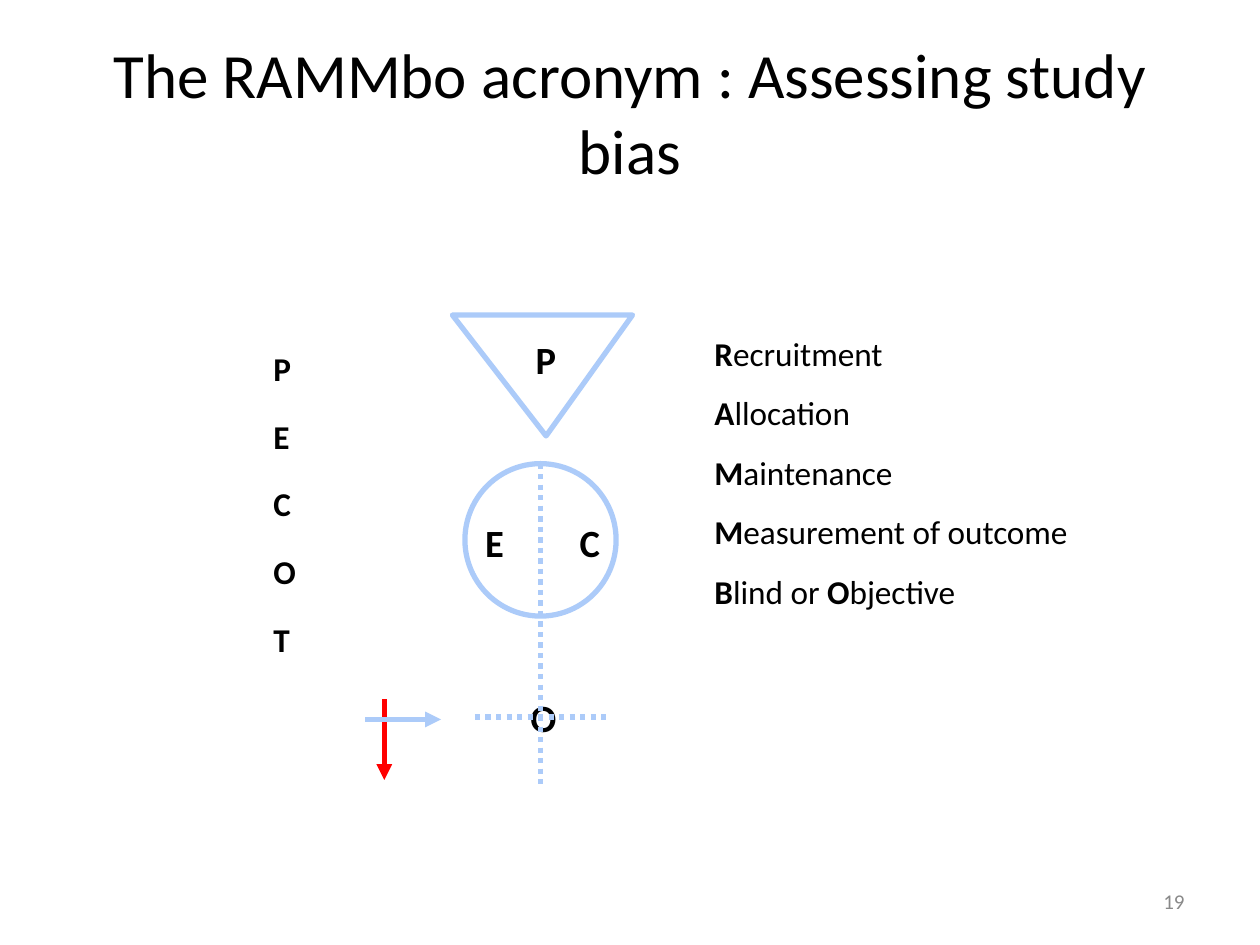
from pptx import Presentation
from pptx.dml.color import RGBColor
from pptx.enum.dml import MSO_LINE
from pptx.enum.shapes import MSO_CONNECTOR, MSO_SHAPE
from pptx.enum.text import MSO_ANCHOR, MSO_AUTO_SIZE, PP_ALIGN
from pptx.oxml.ns import qn
from pptx.util import Inches, Pt
from lxml.etree import SubElement

BLACK = "000000"
GREY = "898989"
RED = "FF0000"
LIGHT_BLUE = "ACCBF9"
SMALL_INSETS = (0.08, 0.04)


def color(code):
    return RGBColor.from_string(code)


def add_box(page, left, top, width, height, insets=(0.1, 0.05),
            anchor=MSO_ANCHOR.MIDDLE, wrap=True, grow=False):
    box = page.shapes.add_textbox(Inches(left), Inches(top), Inches(width), Inches(height))
    frame = box.text_frame
    frame.word_wrap = wrap
    frame.vertical_anchor = anchor
    frame.auto_size = MSO_AUTO_SIZE.SHAPE_TO_FIT_TEXT if grow else MSO_AUTO_SIZE.NONE
    frame.margin_left = frame.margin_right = Inches(insets[0])
    frame.margin_top = frame.margin_bottom = Inches(insets[1])
    return frame


def add_text(paragraph, text, size=19, bold=False, fill=BLACK):
    span = paragraph.add_run()
    span.text = text
    span.font.name = "Calibri"
    span.font.size = Pt(size)
    span.font.bold = bold
    span.font.color.rgb = color(fill)


def add_line_of_text(page, text, place, align, **text_format):
    paragraph = add_box(page, *place).paragraphs[0]
    paragraph.alignment = align
    add_text(paragraph, text, **text_format)


def add_label(page, letter, left, top):
    frame = add_box(page, left, top, 0.38, 0.56, insets=SMALL_INSETS, wrap=False)
    add_text(frame.paragraphs[0], letter, size=22, bold=True)


def add_list(page, items, place, line_spacing, hanging=0):
    frame = add_box(page, *place, insets=SMALL_INSETS, anchor=MSO_ANCHOR.TOP, grow=True)
    for index, spans in enumerate(items):
        paragraph = frame.add_paragraph() if index else frame.paragraphs[0]
        paragraph.line_spacing = line_spacing
        if index:
            paragraph.space_before = Pt(9)
        if hanging:
            properties = paragraph._p.get_or_add_pPr()
            properties.set("marL", str(Inches(hanging)))
            properties.set("indent", str(Inches(-hanging)))
        for position, text in enumerate(spans):
            add_text(paragraph, text, bold=position % 2 == 0)


def add_outline(page, kind, left, top, width, height):
    shape = page.shapes.add_shape(kind, Inches(left), Inches(top), Inches(width), Inches(height))
    shape.shadow.inherit = False
    shape.fill.background()
    shape.line.color.rgb = color(LIGHT_BLUE)
    shape.line.width = Pt(3)
    return shape


def add_line(page, start, end, stroke=LIGHT_BLUE, dotted=False, arrow=False):
    line = page.shapes.add_connector(
        MSO_CONNECTOR.STRAIGHT, *(Inches(value) for value in (*start, *end)))
    line.line.color.rgb = color(stroke)
    line.line.width = Pt(3)
    if dotted:
        line.line.dash_style = MSO_LINE.ROUND_DOT
    if arrow:
        SubElement(line.line._get_or_add_ln(), qn("a:tailEnd"), type="triangle")
    SubElement(line._element.spPr, qn("a:effectLst"))
    return line


def add_diagram(page):
    for letter, left, top in (("P", 4.17, 2.57), ("E", 3.77, 4.02),
                              ("C", 4.52, 4.02), ("O", 4.13, 5.41)):
        add_label(page, letter, left, top)
    add_line(page, (3.05, 5.55), (3.05, 6.19), stroke=RED, arrow=True)
    circle = add_outline(page, MSO_SHAPE.OVAL, 3.69, 3.68, 1.2, 1.21)
    divider = add_line(page, (4.29, 3.68), (4.29, 6.22), dotted=True)
    divider.begin_connect(circle, 0)
    triangle = add_outline(page, MSO_SHAPE.ISOSCELES_TRIANGLE, 3.59, 2.5, 1.43, 0.96)
    triangle.rotation = 180
    triangle.adjustments[0] = 0.48
    add_line(page, (3.77, 5.69), (4.81, 5.69), dotted=True)
    add_line(page, (2.9, 5.71), (3.5, 5.71), arrow=True)


def main():
    deck = Presentation()
    deck.slide_width = Inches(10)
    deck.slide_height = Inches(7.5)
    page = deck.slides.add_slide(deck.slide_layouts[6])
    add_line_of_text(page, "The RAMMbo acronym : Assessing study bias",
                     (0.5, 0.26, 9, 1.25), PP_ALIGN.CENTER, size=36)
    add_line_of_text(page, "19", (7.17, 6.95, 2.33, 0.4), PP_ALIGN.RIGHT, size=12, fill=GREY)
    add_diagram(page)
    add_list(page, "PECOT", (2.09, 2.63, 0.55, 2.8), 1.3)
    criteria = (
        ("R", "ecruitment"),
        ("A", "llocation"),
        ("M", "aintenance"),
        ("M", "easurement of outcome"),
        ("B", "lind or ", "O", "bjective"),
    )
    add_list(page, criteria, (5.59, 2.57, 3.25, 2.48), 1.1, hanging=0.25)
    deck.save("out.pptx")


if __name__ == "__main__":
    main()
